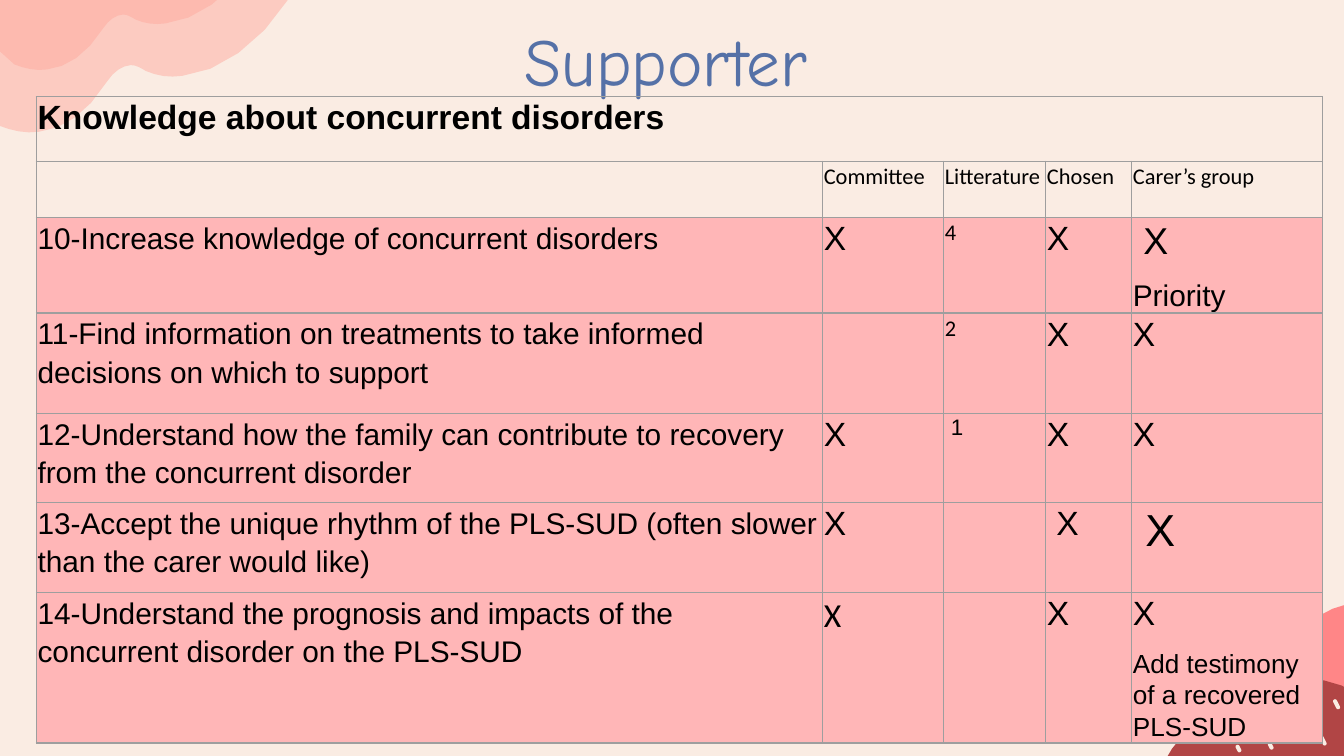
import pptx
import pptx.dml.color
import pptx.enum.shapes
import pptx.enum.text
import pptx.oxml
import pptx.oxml.ns
import pptx.util

SLIDE_WIDTH = pptx.util.Inches(10)
SLIDE_HEIGHT = SLIDE_WIDTH * 9 // 16
CREAM, SALMON, CORAL, MAROON = "FAECE3", "FFA79B", "FF8687", "B14545"
PINK, BLUE, GREY, BLACK = "FFB6B7", "5571A7", "9E9E9E", "000000"

CLOUD = [
    (137, 0), (114, 7, 90, 22, 73, 42), (45, 74, 33, 110, 36, 138),
    (37, 144, 35, 150, 31, 156), (4, 194, 5, 237, 32, 251),
    (41, 255, 51, 258, 61, 257), (79, 256, 97, 246, 114, 222),
    (119, 215, 126, 211, 132, 211), (136, 211, 140, 214, 143, 216),
    (151, 220, 160, 222, 170, 221), (197, 220, 229, 200, 251, 169),
    (265, 150, 272, 129, 273, 111),
]
CORAL_PETAL = [
    (221, 0), (234, 0, 246, 5, 256, 14), (278, 34, 271, 73, 238, 103),
    (232, 108, 229, 113, 228, 118), (225, 146, 206, 176, 174, 199),
    (153, 214, 127, 223, 104, 224), (0, 87), (5, 70, 17, 52, 34, 37),
    (57, 17, 84, 6, 108, 6), (123, 6, 136, 11, 145, 20),
    (151, 26, 154, 27, 158, 27), (163, 27, 168, 25, 173, 21),
    (191, 6, 206, 0, 221, 0),
]
MAROON_PETAL = [
    (105, 0), (126, 0, 143, 7, 154, 20), (158, 28, 163, 30, 168, 30),
    (172, 30, 177, 29, 181, 26), (197, 16, 211, 12, 223, 12),
    (240, 12, 254, 19, 264, 32), (283, 54, 269, 93, 233, 116),
    (226, 121, 222, 125, 221, 130), (213, 157, 189, 184, 154, 202),
    (135, 211, 114, 216, 95, 216), (90, 216, 86, 216, 81, 215),
    (0, 64), (8, 48, 22, 32, 41, 20), (62, 7, 85, 0, 105, 0),
]
SEEDS = [(9.2, 5.54, 0.06), (9.44, 5.52, 0.06), (9.83, 5.47, 0.08), (9.93, 5.2, 0.08)]

COLUMN_WIDTHS = [5.85, 0.9, 0.76, 0.64, 1.42]
ROW_HEIGHTS = [0.48, 0.42, 0.71, 0.75, 0.66, 0.67, 1.12]
COLUMN_STYLES = [(16, "Arial"), (18, "Arial"), (12, "Calibri"), (18, "Arial"), (18, "Arial")]
HEADINGS = ["", "Committee", "Litterature", "Chosen", "Carer’s group"]
OBJECTIVES = [
    ["10-Increase knowledge of concurrent disorders", "X", "4", "X",
     [(" X", 20, "Arial"), ("Priority", 16, "Arial")]],
    ["11-Find information on treatments to take informed decisions on which to support",
     "", "2", "X", "X"],
    ["12-Understand how the family can contribute to recovery from the concurrent disorder",
     "X", [(" 1", 12, "Arial")], "X", "X"],
    ["13-Accept the unique rhythm of the PLS-SUD (often slower than the carer would like)",
     "X", "", " X", [(" X", 24, "Arial")]],
    ["14-Understand the prognosis and impacts of the concurrent disorder on the PLS-SUD",
     [("X", 18, "Calibri")], "", "X",
     [("X", 18, "Arial"), ("Add testimony of a recovered PLS-SUD", 14, "Arial")]],
]


def paint(color_format, color):
    """Set a colour format to a hex colour."""
    color_format.rgb = pptx.dml.color.RGBColor.from_string(color)


def flatten(outline, steps=4):
    """Turn corners and cubic curves into a list of points."""
    points = [outline[0]]
    for segment in outline[1:]:
        if len(segment) == 2:
            points.append(segment)
            continue
        controls = [points[-1], segment[:2], segment[2:4], segment[4:]]
        for step in range(1, steps + 1):
            t = step / steps
            weights = [(1 - t) ** 3, 3 * t * (1 - t) ** 2, 3 * t * t * (1 - t), t ** 3]
            points.append(tuple(
                sum(weight * control[axis] for weight, control in zip(weights, controls))
                for axis in (0, 1)))
    return points


def style_shape(shape, color, rotation=0):
    """Give a shape a plain fill without line or shadow."""
    shape.shadow.inherit = False
    shape.rotation = rotation
    shape.line.fill.background()
    shape.fill.solid()
    paint(shape.fill.fore_color, color)


def add_blob(slide, box, outline, grid, color, rotation=0):
    """Draw an outline, given on a grid of columns and rows, inside the box."""
    left, top, width, height = box
    points = [(pptx.util.Inches(left + x * width / grid[0]),
               pptx.util.Inches(top + y * height / grid[1])) for x, y in flatten(outline)]
    builder = slide.shapes.build_freeform(*points[0])
    builder.add_line_segments(points[1:], close=True)
    shape = builder.convert_to_shape()
    style_shape(shape, color, rotation)
    return shape


def add_decoration(slide):
    """Place the clouds at the top left and the petals at the bottom right."""
    for box in [(-0.39, -1.63, 2.74, 2.53), (-0.21, -1.63, 2.26, 2.08)]:
        cloud = add_blob(slide, box, CLOUD, (274, 253), SALMON, 357)
        color_element = cloud._element.spPr.find(".//" + pptx.oxml.ns.qn("a:srgbClr"))
        color_element.append(color_element.makeelement(
            pptx.oxml.ns.qn("a:alpha"), {"val": "47000"}))
    add_blob(slide, (9.21, 4.39, 2.78, 2.24), CORAL_PETAL, (278, 224), CORAL)
    add_blob(slide, (8.65, 5.05, 2.83, 2.16), MAROON_PETAL, (283, 216), MAROON)
    for left, top, length in SEEDS:
        box = map(pptx.util.Inches, (left, top, 0.03, length))
        seed = slide.shapes.add_shape(pptx.enum.shapes.MSO_SHAPE.ROUNDED_RECTANGLE, *box)
        seed.adjustments[0] = 0.5
        style_shape(seed, CREAM, 333)


def format_title(slide, box, text):
    """Move the title placeholder to the box and style its text."""
    title = slide.shapes.title
    title.left, title.top, title.width, title.height = map(pptx.util.Inches, box)
    frame = title.text_frame
    frame.text = text
    frame.auto_size = pptx.enum.text.MSO_AUTO_SIZE.NONE
    frame.vertical_anchor = pptx.enum.text.MSO_ANCHOR.MIDDLE
    frame.margin_left = frame.margin_top = frame.margin_right = frame.margin_bottom = 0
    paragraph = frame.paragraphs[0]
    paragraph.alignment = pptx.enum.text.PP_ALIGN.CENTER
    font = paragraph.runs[0].font
    font.size, font.name = pptx.util.Pt(36), "Comic Neue"
    paint(font.color, BLUE)


def format_cell(cell, fill):
    """Give a cell thin grey borders, tight margins and a fill."""
    properties = cell._tc.get_or_add_tcPr()
    for side in ("lnL", "lnR", "lnT", "lnB"):
        properties.append(pptx.oxml.parse_xml(
            f'<a:{side} {pptx.oxml.ns.nsdecls("a")} w="9525"><a:solidFill>'
            f'<a:srgbClr val="{GREY}"/></a:solidFill></a:{side}>'))
    cell.margin_left = cell.margin_right = pptx.util.Inches(0.01)
    cell.margin_top = cell.margin_bottom = 0
    if fill:
        cell.fill.solid()
        paint(cell.fill.fore_color, fill)
    else:
        cell.fill.background()


def write_cell(cell, content, bold=False, line_spacing=1.07, space_after=8):
    """Write (text, size, font) paragraphs into a cell."""
    cell.text_frame.text = "\n".join(text for text, _, _ in content)
    for paragraph, (_, size, name) in zip(cell.text_frame.paragraphs, content):
        paragraph.line_spacing = line_spacing
        paragraph.space_after = pptx.util.Pt(space_after)
        for run in paragraph.runs:
            run.font.size, run.font.name, run.font.bold = pptx.util.Pt(size), name, bold
            paint(run.font.color, BLACK)


def add_objectives_table(slide, left, top):
    """Add the table of objectives with its heading rows."""
    box = [left, top, sum(COLUMN_WIDTHS), sum(ROW_HEIGHTS)]
    table = slide.shapes.add_table(
        len(ROW_HEIGHTS), len(COLUMN_WIDTHS), *map(pptx.util.Inches, box)).table
    table.first_row = table.horz_banding = False
    for column, width in zip(table.columns, COLUMN_WIDTHS):
        column.width = pptx.util.Inches(width)
    for index, height in enumerate(ROW_HEIGHTS):
        table.rows[index].height = pptx.util.Inches(height)
        for cell in table.rows[index].cells:
            format_cell(cell, PINK if index > 1 else None)
    table.cell(0, 0).merge(table.cell(0, len(COLUMN_WIDTHS) - 1))
    write_cell(table.cell(0, 0), [("Knowledge about concurrent disorders", 18, "Arial")], bold=True)
    for column, heading in enumerate(HEADINGS):
        write_cell(table.cell(1, column), [(heading, 12, "Calibri")])
    for row, objective in enumerate(OBJECTIVES, start=2):
        for column, content in enumerate(objective):
            if isinstance(content, str):
                content = [(content, *COLUMN_STYLES[column])]
            spacing = (1.15, 10) if column == 0 else (1.07, 8)
            write_cell(table.cell(row, column), content, False, *spacing)


def main():
    """Build and save the presentation."""
    presentation = pptx.Presentation()
    presentation.slide_width, presentation.slide_height = SLIDE_WIDTH, SLIDE_HEIGHT
    slide = presentation.slides.add_slide(presentation.slide_layouts[5])
    slide.background.fill.solid()
    paint(slide.background.fill.fore_color, CREAM)
    add_decoration(slide)
    format_title(slide, (0.74, 0.13, 8.43, 0.63), "Supporter")
    add_objectives_table(slide, 0.27, 0.72)
    presentation.save("out.pptx")


if __name__ == "__main__":
    main()
